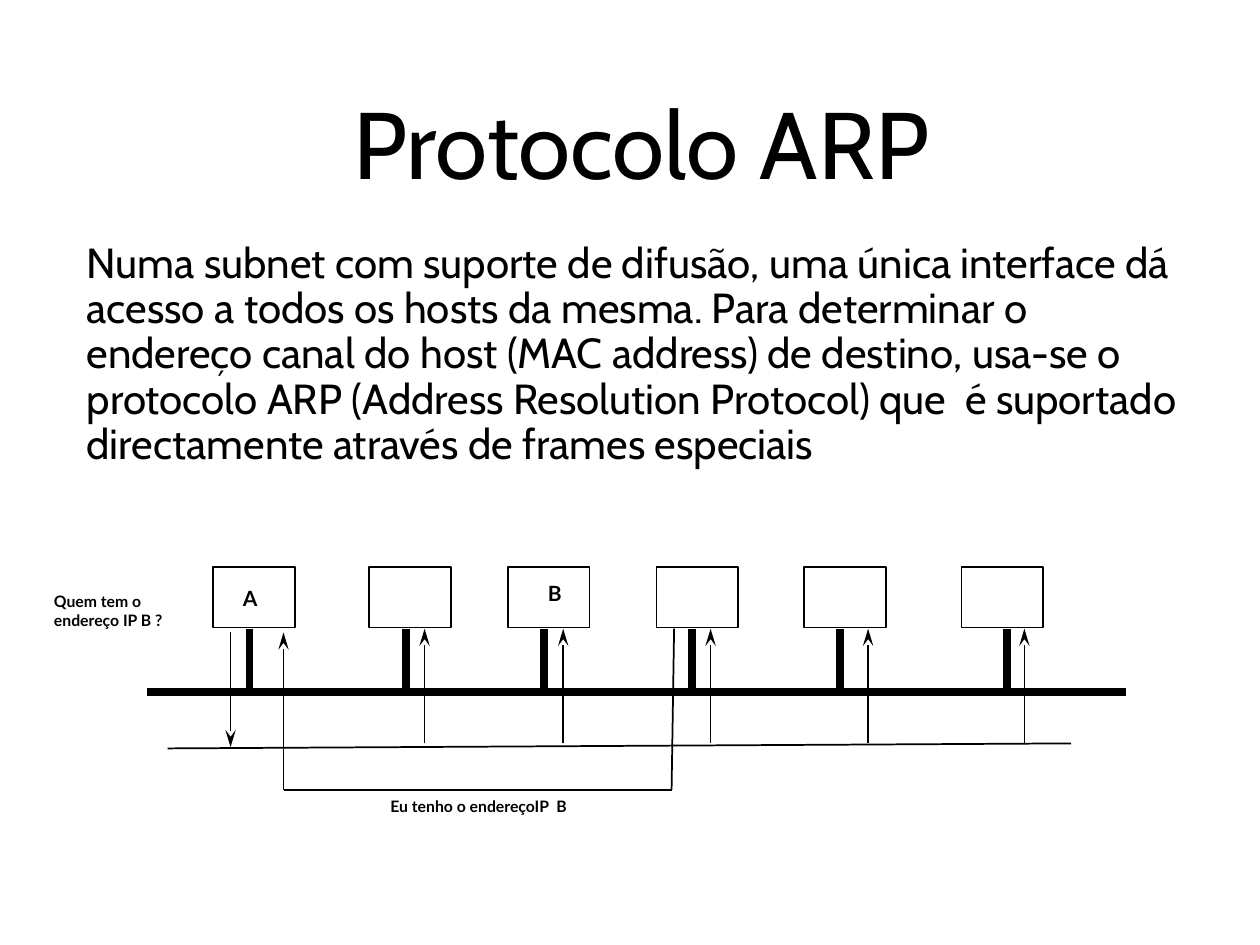
from lxml import etree
from pptx import Presentation
from pptx.dml.color import RGBColor
from pptx.enum.shapes import MSO_CONNECTOR, MSO_SHAPE
from pptx.enum.text import MSO_ANCHOR, MSO_AUTO_SIZE, PP_ALIGN
from pptx.oxml.ns import qn
from pptx.util import Inches, Pt

STRAIGHT = MSO_CONNECTOR.STRAIGHT
RECTANGLE = MSO_SHAPE.RECTANGLE
BLACK = "000000"

# Content
TITLE = "Protocolo ARP"
BODY = (
    "Numa subnet com suporte de difusão, uma única interface dá acesso a todos "
    "os hosts da mesma. Para determinar o endereço canal do host (MAC address) "
    "de destino, usa-se o protocolo ARP (Address Resolution Protocol) que  é "
    "suportado directamente através de frames especiais"
)
# Text lines, (left, top, width, height), size
LABELS = [
    (["Quem tem o", "endereço IP B ?"], (0.33, 4.65, 1.19, 0.4), 9),
    (["Eu tenho o endereçoIP  B"], (3, 6.27, 1.79, 0.25), 9),
    (["B"], (4.25, 4.56, 0.32, 0.3), 12),
    (["A"], (1.83, 4.6, 0.32, 0.3), 12),
]
# Horizontal places of each host: box left, bus stub, request arrow
HOSTS = [
    (1.69, 1.98, None),
    (2.93, 3.22, 3.37),
    (4.03, 4.32, 4.47),
    (5.21, 5.49, 5.64),
    (6.38, 6.67, 6.89),
    (7.63, 7.99, 8.13),
]

# Levels of the diagram
HOST_TOP, HOST_WIDTH, HOST_HEIGHT = 4.5, 0.65, 0.48
HOST_BOTTOM = 4.99
BUS = 5.49
REQUEST = 5.9
REPLY = 6.27


def color(value):
    return RGBColor.from_string(value)


def write(shape, lines, size, font, bold=False, align=PP_ALIGN.LEFT,
          anchor=MSO_ANCHOR.TOP, spacing=None, wrap=True,
          auto_size=MSO_AUTO_SIZE.NONE):
    frame = shape.text_frame
    frame.word_wrap = wrap
    frame.auto_size = auto_size
    frame.vertical_anchor = anchor
    for index, line in enumerate(lines):
        paragraph = frame.add_paragraph() if index else frame.paragraphs[0]
        paragraph.alignment = align
        paragraph.line_spacing = spacing
        run = paragraph.add_run()
        run.text = line
        run.font.size = Pt(size)
        run.font.name = font
        run.font.bold = bold
        run.font.color.rgb = color(BLACK)


def add_line(slide, start, end, width=1, arrow=False):
    points = [Inches(value) for value in (*start, *end)]
    connector = slide.shapes.add_connector(STRAIGHT, *points)
    connector.line.color.rgb = color(BLACK)
    connector.line.width = Pt(width)
    if arrow:
        etree.SubElement(connector.line._get_or_add_ln(), qn("a:tailEnd"),
                         type="stealth", w="med", len="lg")
    etree.SubElement(connector._element.spPr, qn("a:effectLst"))


def add_host(slide, left):
    box = (left, HOST_TOP, HOST_WIDTH, HOST_HEIGHT)
    host = slide.shapes.add_shape(RECTANGLE, *map(Inches, box))
    host.shadow.inherit = False
    host.fill.background()
    host.line.color.rgb = color(BLACK)
    host.line.width = Pt(1)


def main():
    presentation = Presentation()
    presentation.slide_width = Inches(10)
    presentation.slide_height = Inches(7.5)
    slide = presentation.slides.add_slide(presentation.slide_layouts[5])

    # Title and explanation
    title = slide.shapes.title
    title.left, title.top, title.width, title.height = map(
        Inches, (0.59, 0.59, 9, 1.07))
    write(title, [TITLE], 54, "Cabin", align=PP_ALIGN.CENTER,
          anchor=MSO_ANCHOR.MIDDLE)
    body = slide.shapes.add_textbox(*map(Inches, (0.59, 1.87, 9, 1.92)))
    write(body, [BODY], 24, "Cabin", spacing=0.9,
          auto_size=MSO_AUTO_SIZE.SHAPE_TO_FIT_TEXT)

    # Bus with the hosts attached to it
    add_line(slide, (1.17, BUS), (8.94, BUS), width=4.5)
    for left, stub, _ in HOSTS:
        add_host(slide, left)
        add_line(slide, (stub, HOST_BOTTOM), (stub, BUS), width=4.5)

    # Broadcast request from A to every other host
    add_line(slide, (1.83, 5.02), (1.83, 5.93), arrow=True)
    add_line(slide, (1.33, 5.94), (8.5, REQUEST))
    for _, _, request in HOSTS:
        if request is not None:
            add_line(slide, (request, REQUEST), (request, HOST_BOTTOM), arrow=True)

    # Reply back to A
    reply = [(5.35, HOST_BOTTOM), (5.33, REPLY), (2.25, REPLY), (2.25, 5.02)]
    for index, (start, end) in enumerate(zip(reply, reply[1:]), 1):
        add_line(slide, start, end, arrow=index == len(reply) - 1)

    # Labels
    for lines, box, size in LABELS:
        label = slide.shapes.add_textbox(*map(Inches, box))
        write(label, lines, size, "Lato", bold=True, wrap=False,
              auto_size=MSO_AUTO_SIZE.SHAPE_TO_FIT_TEXT)

    presentation.save("out.pptx")


if __name__ == "__main__":
    main()
